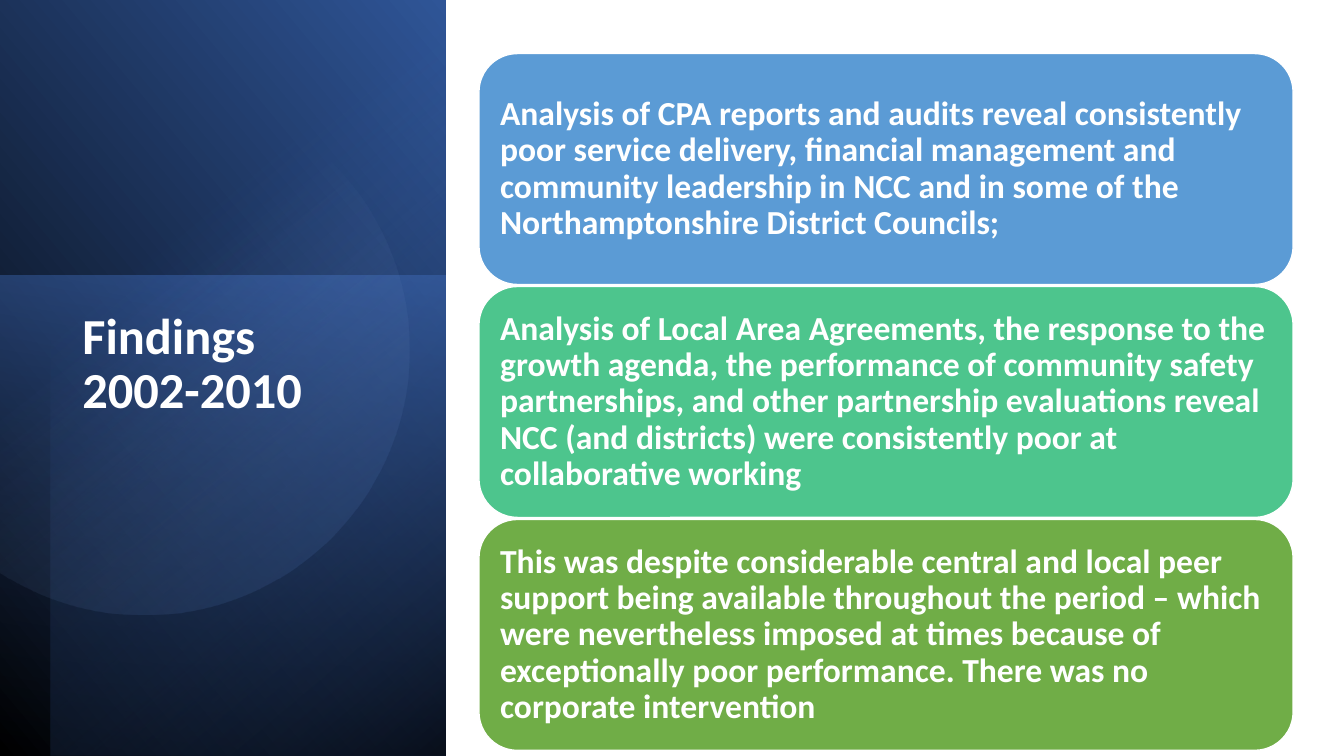
from dataclasses import dataclass
from math import acos, cos, sin

from lxml.etree import SubElement
from pptx import Presentation
from pptx.dml.color import RGBColor as Rgb
from pptx.enum.shapes import MSO_SHAPE as Shape
from pptx.enum.text import MSO_ANCHOR as Anchor, PP_ALIGN as Align
from pptx.oxml.ns import qn
from pptx.util import Cm, Pt


@dataclass(frozen=True)
class Theme:
    font: str = "Calibri"
    title_size: int = 36
    body_size: int = 24
    white: str = "FFFFFF"
    black: str = "000000"
    navy: str = "203864"
    deep_blue: str = "2F5597"
    mid_blue: str = "4472C4"
    pale_blue: str = "8FAADC"
    cards: tuple = ("5B9BD5", "4DC58D", "70AD47")


class SlideBuilder:
    def __init__(self, page, theme):
        self.page = page
        self.theme = theme

    def shade(self, shape, stops, angle):
        """Fill with (position, colour, opacity %) stops; angle is anticlockwise."""
        shape.shadow.inherit = False
        shape.line.fill.background()
        shape.fill.gradient()
        shape.fill.gradient_angle = angle
        for stop, (position, colour, _) in zip(shape.fill.gradient_stops, stops):
            stop.position = position
            stop.color.rgb = Rgb.from_string(colour)
        colours = shape._element.spPr.iter(qn("a:srgbClr"))
        for colour, (_, _, opacity) in zip(list(colours), stops):
            SubElement(colour, qn("a:alpha")).set("val", str(opacity * 1000))

    def panel(self, left, top, width, height, stops, angle):
        box = self.page.shapes.add_shape(
            Shape.RECTANGLE, Cm(left), Cm(top), Cm(width), Cm(height))
        self.shade(box, stops, angle)

    def clipped_disc(self, centre_x, centre_y, radius, stops, angle, steps=120):
        """Disc cut off by the left edge of the slide."""
        limit = acos(-centre_x / radius)
        turns = [limit * (2 * step / steps - 1) for step in range(steps + 1)]
        points = [(Cm(centre_x + radius * cos(turn)), Cm(centre_y + radius * sin(turn)))
                  for turn in turns]
        outline = self.page.shapes.build_freeform(*points[0])
        outline.add_line_segments(points[1:], close=True)
        self.shade(outline.convert_to_shape(), stops, angle)

    def add_span(self, para, text, size):
        para.alignment = Align.LEFT
        para.line_spacing = 0.9
        span = para.add_run()
        span.text = text
        span.font.name = self.theme.font
        span.font.size = Pt(size)
        span.font.bold = True
        span.font.color.rgb = Rgb.from_string(self.theme.white)

    def title(self, left, top, width, height, lines):
        box = self.page.shapes.add_textbox(Cm(left), Cm(top), Cm(width), Cm(height))
        frame = box.text_frame
        frame.word_wrap = True
        frame.vertical_anchor = Anchor.TOP
        para = frame.paragraphs[0]
        for number, line in enumerate(lines):
            if number:
                para.add_line_break()
            self.add_span(para, line, self.theme.title_size)

    def card(self, left, top, width, height, colour, text):
        box = self.page.shapes.add_shape(
            Shape.ROUNDED_RECTANGLE, Cm(left), Cm(top), Cm(width), Cm(height))
        box.shadow.inherit = False
        box.fill.solid()
        box.fill.fore_color.rgb = Rgb.from_string(colour)
        box.line.color.rgb = Rgb.from_string(self.theme.white)
        box.line.width = Pt(1)
        frame = box.text_frame
        frame.word_wrap = True
        frame.vertical_anchor = Anchor.MIDDLE
        frame.margin_left = frame.margin_right = Cm(0.25)
        frame.margin_top = frame.margin_bottom = Cm(0.25)
        self.add_span(frame.paragraphs[0], text, self.theme.body_size)


FINDINGS = (
    "Analysis of CPA reports and audits reveal consistently poor service delivery, "
    "financial management and community leadership in NCC and in some of the "
    "Northamptonshire District Councils;",
    "Analysis of Local Area Agreements, the response to the growth agenda, the "
    "performance of community safety partnerships, and other partnership evaluations "
    "reveal NCC (and districts) were consistently poor at collaborative working",
    "This was despite considerable central and local peer support being available "
    "throughout the period – which were nevertheless imposed at times because of "
    "exceptionally poor performance. There was no corporate intervention",
)


def main():
    deck = Presentation()
    deck.slide_width, deck.slide_height = Cm(33.87), Cm(19.05)
    page = deck.slides.add_slide(deck.slide_layouts[6])
    theme = Theme()
    builder = SlideBuilder(page, theme)

    # Layered blue side panel
    side_width, side_height = 11.23, 19.05
    builder.panel(0, 0, side_width, side_height,
                  [(0, theme.black, 100), (1, theme.deep_blue, 100)], 40)
    builder.panel(0, 6.95, side_width, side_height - 6.95,
                  [(0, theme.mid_blue, 50), (1, theme.navy, 0)], 260)
    builder.panel(1.27, 0, side_width - 1.27, side_height,
                  [(0, theme.black, 59), (0.69, theme.mid_blue, 0)], 130)
    builder.clipped_disc(3.64, 8.81, 6.68,
                         [(0.39, theme.pale_blue, 0), (1, theme.deep_blue, 26)], 308)

    # Title
    builder.title(1.83, 7.7, 8, 8.53, ("Findings", "2002-2010"))

    # Findings cards
    card_height, gap = 5.82, 0.05
    for row, (colour, text) in enumerate(zip(theme.cards, FINDINGS)):
        builder.card(12.07, 1.35 + row * (card_height + gap), 20.52, card_height,
                     colour, text)

    deck.save("out.pptx")


if __name__ == "__main__":
    main()
